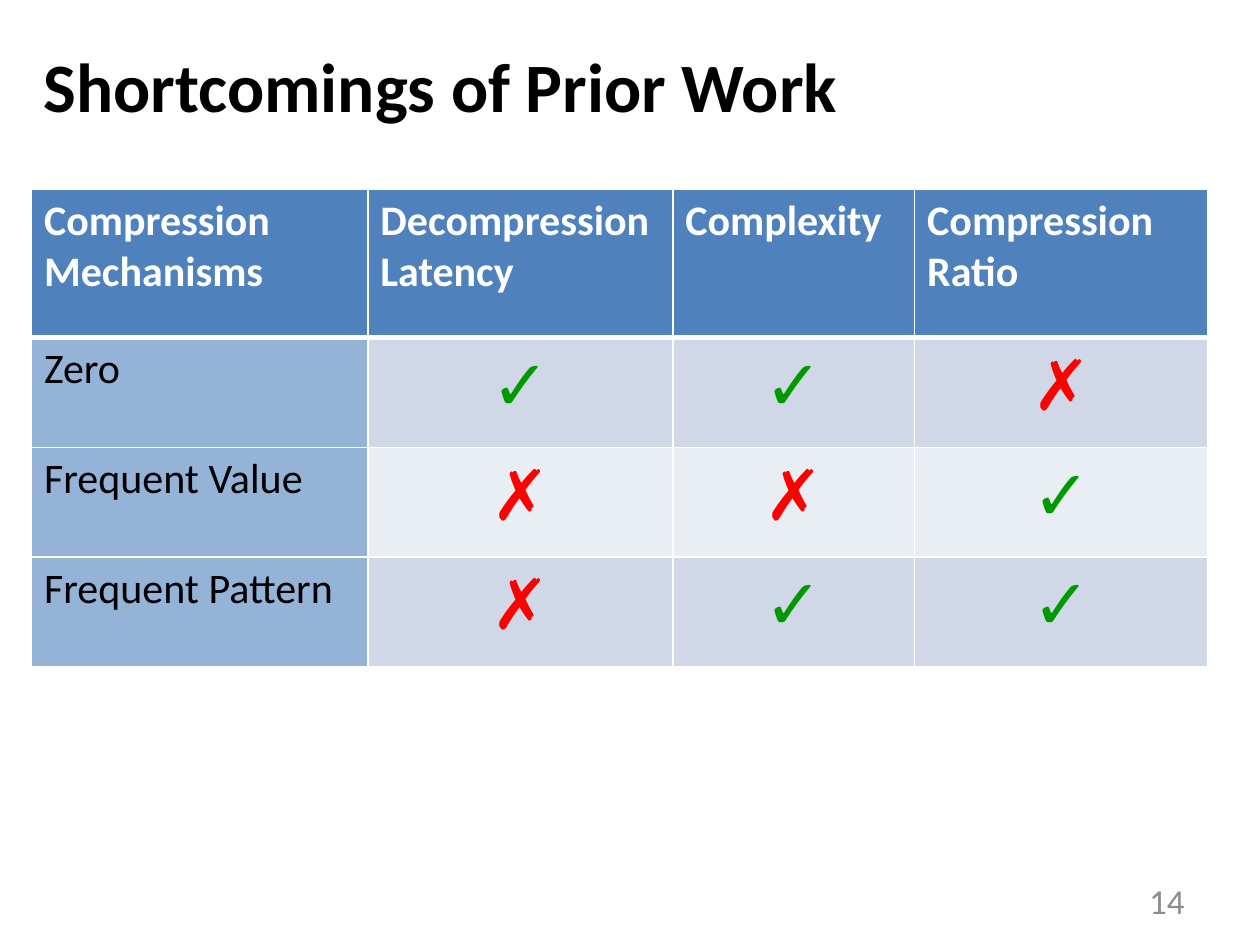
from lxml import etree
from pptx import Presentation
from pptx.dml.color import RGBColor
from pptx.enum.text import MSO_ANCHOR, PP_ALIGN
from pptx.oxml.ns import qn
from pptx.util import Inches, Pt

LEFT, CENTER, RIGHT = PP_ALIGN.LEFT, PP_ALIGN.CENTER, PP_ALIGN.RIGHT
MIDDLE = MSO_ANCHOR.MIDDLE
FONT = "Calibri"
COLORS = {
    "black": "000000",
    "white": "FFFFFF",
    "gray": "8C8C8C",
    "head": "4F81BD",
    "name": "95B3D7",
    "odd": "D0D8E8",
    "even": "E9EDF4",
    "yes": "009900",
    "no": "FF0000",
}
MARKS = {"✓": "yes", "✗": "no"}
WIDTHS = [2.67, 2.42, 1.92, 2.33]
HEIGHTS = [1.18, 0.87, 0.87, 0.87]
ROWS = [
    ["Compression\nMechanisms", "Decompression\nLatency", "Complexity", "Compression\nRatio"],
    ["Zero", "✓", "✓", "✗"],
    ["Frequent Value", "✗", "✗", "✓"],
    ["Frequent Pattern", "✗", "✓", "✓"],
]


def color(name):
    return RGBColor.from_string(COLORS[name])


def write(frame, text, size, tint, bold=False, align=LEFT):
    frame.text = text
    for para in frame.paragraphs:
        para.alignment = align
        font = para.font
        font.name, font.size, font.bold = FONT, Pt(size), bold
        font.color.rgb = color(tint)


def add_text(slide, box, text, size, tint, **style):
    frame = slide.shapes.add_textbox(*map(Inches, box)).text_frame
    frame.word_wrap = True
    frame.vertical_anchor = MIDDLE
    write(frame, text, size, tint, **style)


def add_edges(cell, top, bottom):
    props = cell._tc.get_or_add_tcPr()
    for side, width in zip("LRTB", (1, 1, top, bottom)):
        line = etree.SubElement(props, qn(f"a:ln{side}"), w=str(Pt(width)))
        fill = etree.SubElement(line, qn("a:solidFill"))
        etree.SubElement(fill, qn("a:srgbClr"), val=COLORS["white"])


def fill_cell(cell, row, col, text):
    add_edges(cell, 3 if row == 1 else 1, 3 if row == 0 else 1)
    if row == 0:
        shade = "head"
        write(cell.text_frame, text, 24, "white", bold=True)
    elif col == 0:
        shade = "name"
        write(cell.text_frame, text, 24, "black")
    else:
        shade = "odd" if row % 2 else "even"
        write(cell.text_frame, text, 40, MARKS[text], align=CENTER)
    cell.fill.solid()
    cell.fill.fore_color.rgb = color(shade)


def add_grid(slide, left, top):
    box = map(Inches, (left, top, sum(WIDTHS), sum(HEIGHTS)))
    table = slide.shapes.add_table(len(ROWS), len(WIDTHS), *box).table
    for col, width in zip(table.columns, WIDTHS):
        col.width = Inches(width)
    for row, height in zip(table.rows, HEIGHTS):
        row.height = Inches(height)
    for row, texts in enumerate(ROWS):
        for col, text in enumerate(texts):
            fill_cell(table.cell(row, col), row, col, text)


def main():
    deck = Presentation()
    deck.slide_width, deck.slide_height = Inches(10), Inches(7.5)
    slide = deck.slides.add_slide(deck.slide_layouts[6])
    add_text(slide, (0.25, 0.26, 9.42, 0.83), "Shortcomings of Prior Work", 39.6, "black", bold=True)
    add_text(slide, (7.17, 6.95, 2.33, 0.4), "14", 20, "gray", align=RIGHT)
    add_grid(slide, 0.25, 1.5)
    deck.save("out.pptx")


if __name__ == "__main__":
    main()
